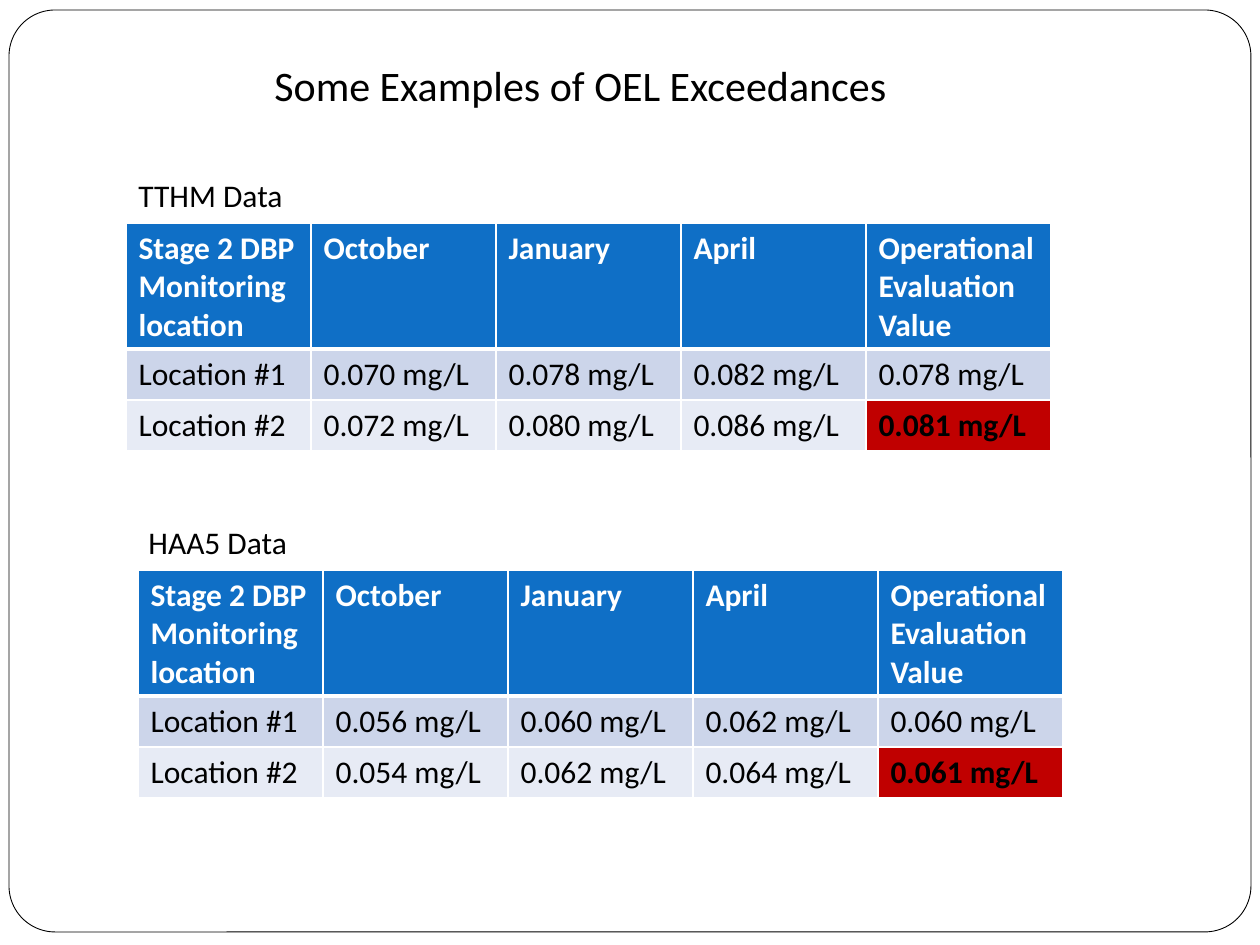
"""Build the slide of OEL exceedance examples with its TTHM and HAA5 tables."""
import pptx
import pptx.dml.color
import pptx.enum.shapes
import pptx.enum.text
import pptx.oxml
import pptx.oxml.ns
import pptx.util

SCALE = 914400 / 126
THEME = {
    "font": "Calibri", "title": 24, "body": 18,
    "black": "000000", "white": "FFFFFF", "header": "0F6FC6",
    "bands": ["CCD5EA", "E7EBF5"], "alert": "C00000",
}
HEADINGS = ["Stage 2 DBP Monitoring location", "October", "January", "April",
            "Operational Evaluation Value"]
SECTIONS = [
    {"caption": "TTHM Data", "caption_at": (126, 170), "table_at": (126, 223),
     "values": [["0.070", "0.078", "0.082", "0.078"],
                ["0.072", "0.080", "0.086", "0.081"]]},
    {"caption": "HAA5 Data", "caption_at": (136, 517), "table_at": (138, 570),
     "values": [["0.056", "0.060", "0.062", "0.060"],
                ["0.054", "0.062", "0.064", "0.061"]]},
]
COLUMN_WIDTH = 185
ROW_HEIGHTS = [126, 51, 51]


def emu(*lengths):
    return [pptx.util.Emu(round(length * SCALE)) for length in lengths]


def write(frame, text, size, color="black", bold=False):
    frame.word_wrap = True
    span = frame.paragraphs[0].add_run()
    span.text = text
    formats = {"name": THEME["font"], "size": pptx.util.Pt(THEME[size]), "bold": bold}
    for name, value in formats.items():
        setattr(span.font, name, value)
    span.font.color.rgb = pptx.dml.color.RGBColor.from_string(THEME[color])


deck = pptx.Presentation()
deck.slide_width, deck.slide_height = emu(1260, 945)
page = deck.slides.add_slide(deck.slide_layouts[6])

border = page.shapes.add_shape(
    pptx.enum.shapes.MSO_SHAPE.ROUNDED_RECTANGLE, *emu(9, 10, 1242, 922))
border.adjustments[0] = 0.05
border.shadow.inherit = False
border.fill.solid()
border.fill.fore_color.rgb = pptx.dml.color.RGBColor.from_string(THEME["white"])
border.line.color.rgb = pptx.dml.color.RGBColor.from_string(THEME["black"])
border.line.width = pptx.util.Pt(0.5)

for section in SECTIONS:
    caption = page.shapes.add_textbox(*emu(*section["caption_at"], 210, 50))
    write(caption.text_frame, section["caption"], "body")

    rows = [HEADINGS]
    for number, values in enumerate(section["values"], 1):
        rows.append([f"Location #{number}"] + [f"{value} mg/L" for value in values])
    size = (COLUMN_WIDTH * len(HEADINGS), sum(ROW_HEIGHTS))
    table = page.shapes.add_table(
        len(rows), len(HEADINGS), *emu(*section["table_at"], *size)).table
    for column in table.columns:
        column.width = emu(COLUMN_WIDTH)[0]
    for row, height in zip(table.rows, ROW_HEIGHTS):
        row.height = emu(height)[0]

    for row_index, texts in enumerate(rows):
        is_header = row_index == 0
        for column_index, text in enumerate(texts):
            is_alert = row_index == 2 and column_index == 4
            cell = table.cell(row_index, column_index)
            write(cell.text_frame, text, "body",
                  "white" if is_header else "black", is_header or is_alert)
            edges = {"L": 1, "R": 1, "T": 3 if row_index == 1 else 1,
                     "B": 3 if is_header else 1}
            properties = cell._tc.get_or_add_tcPr()
            for edge, width in edges.items():
                properties.append(pptx.oxml.parse_xml(
                    f'<a:ln{edge} {pptx.oxml.ns.nsdecls("a")} w="{pptx.util.Pt(width)}">'
                    f'<a:solidFill><a:srgbClr val="{THEME["white"]}"/></a:solidFill>'
                    f'</a:ln{edge}>'))
            if is_header:
                fill = THEME["header"]
            elif is_alert:
                fill = THEME["alert"]
            else:
                fill = THEME["bands"][row_index - 1]
            cell.fill.solid()
            cell.fill.fore_color.rgb = pptx.dml.color.RGBColor.from_string(fill)

title = page.shapes.add_textbox(*emu(262, 53, 703, 64))
write(title.text_frame, "Some Examples of OEL Exceedances", "title")

deck.save("out.pptx")
